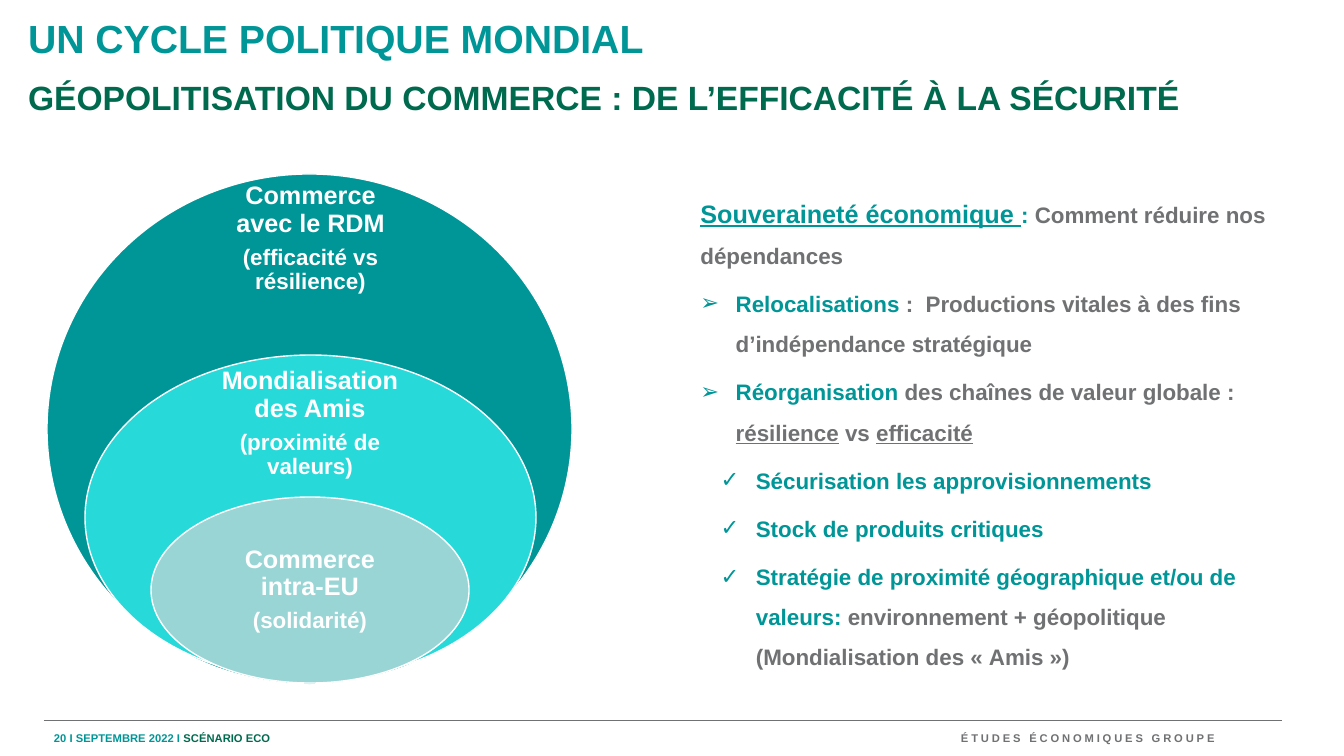
import pptx
import pptx.dml.color
import pptx.enum.shapes
import pptx.enum.text
import pptx.oxml
import pptx.oxml.ns
import pptx.util

PX = 9071
TEAL, GREEN, GREY, WHITE = "009597", "006A4E", "707173", "FFFFFF"
ANCHOR = pptx.enum.text.MSO_ANCHOR
ALIGN = pptx.enum.text.PP_ALIGN
NS = pptx.oxml.ns.nsdecls("a")


def rgb(value):
    return pptx.dml.color.RGBColor.from_string(value)


def write(paragraphs, holder, box, size=16, anchor=ANCHOR.MIDDLE, align=ALIGN.LEFT,
          inset=10, spacing=None):
    holder.left, holder.top, holder.width, holder.height = [v * PX for v in box]
    frame = holder.text_frame
    frame.word_wrap = True
    frame.auto_size = pptx.enum.text.MSO_AUTO_SIZE.NONE
    frame.vertical_anchor = anchor
    frame.margin_left = frame.margin_right = inset * PX
    frame.margin_top = frame.margin_bottom = 5 * PX
    for index, pieces in enumerate(paragraphs):
        paragraph = frame.paragraphs[0] if index == 0 else frame.add_paragraph()
        paragraph.alignment = align
        for text, color, *look in pieces:
            run = paragraph.add_run()
            run.text = text
            run.font.name = "Arial"
            run.font.bold = True
            run.font.size = pptx.util.Pt(look[0] if look else size)
            run.font.color.rgb = rgb(color)
            run.font.underline = "u" in look[1:]
            if spacing:
                run.font._element.set("spc", str(spacing))
    return frame


presentation = pptx.Presentation()
presentation.slide_width = 1344 * PX
presentation.slide_height = 756 * PX
slide = presentation.slides.add_slide(presentation.slide_layouts[5])
shapes = slide.shapes

write([[("UN CYCLE POLITIQUE MONDIAL", TEAL)]], shapes.title, (18, 13, 1282, 50), size=28)
write([[("GÉOPOLITISATION DU COMMERCE : DE L’EFFICACITÉ À LA SÉCURITÉ", GREEN)]],
      shapes.add_textbox(0, 0, 0, 0), (18, 72, 1205, 55), size=24, anchor=ANCHOR.TOP)

circles = [
    ((47, 174, 525, 510), TEAL, 183, 239, "Commerce avec le RDM", "(efficacité vs résilience)"),
    ((85, 355, 451, 325), "28D9DA", 210, 424, "Mondialisation des Amis", "(proximité de valeurs)"),
    ((151, 497, 318, 186), "99D5D5", 224, 590, "Commerce intra-EU", "(solidarité)"),
]
label_height = 140
for box, fill, label_width, label_middle, zone, principle in circles:
    circle = shapes.add_shape(pptx.enum.shapes.MSO_SHAPE.OVAL, *[v * PX for v in box])
    circle.shadow.inherit = False
    circle.fill.solid()
    circle.fill.fore_color.rgb = rgb(fill)
    circle.line.color.rgb = rgb(WHITE)
    circle.line.width = pptx.util.Pt(1)
    label_box = (310 - label_width // 2, label_middle - label_height // 2, label_width, label_height)
    label = write([[(zone, WHITE, 18)], [(principle, WHITE)]], shapes.add_textbox(0, 0, 0, 0),
                  label_box, align=ALIGN.CENTER, inset=14)
    for paragraph, gap in zip(label.paragraphs, (6.3, 5.6)):
        paragraph.line_spacing = 0.9
        paragraph.space_after = pptx.util.Pt(gap)

sovereignty = [
    (54, None, [("Souveraineté économique ", TEAL, 18, "u"), (": ", TEAL),
                ("Comment réduire nos dépendances", GREY)]),
    (89, "➢", [("Relocalisations ", TEAL),
               (":  Productions vitales à des fins d’indépendance stratégique", GREY)]),
    (89, "➢", [("Réorganisation", TEAL), (" des chaînes de valeur globale : ", GREY),
               ("résilience", GREY, 16, "u"), (" vs ", GREY), ("efficacité", GREY, 16, "u")]),
    (109, "✓", [("Sécurisation les approvisionnements", TEAL)]),
    (109, "✓", [("Stock de produits critiques", TEAL)]),
    (109, "✓", [("Stratégie de proximité géographique et/ou de valeurs: ", TEAL),
                ("environnement + géopolitique (Mondialisation des «\u00a0Amis\u00a0»)", GREY)]),
]
points = write([pieces for _, _, pieces in sovereignty], shapes.add_textbox(0, 0, 0, 0),
               (636, 178, 654, 524), anchor=ANCHOR.TOP)
for index, (paragraph, (indent, bullet, _)) in enumerate(zip(points.paragraphs, sovereignty)):
    properties = paragraph._p.get_or_add_pPr()
    properties.set("marL", str(indent * 9144))
    if bullet:
        properties.set("indent", str(-35 * 9144))
        for xml in (f'<a:buClr {NS}><a:srgbClr val="{TEAL}"/></a:buClr>',
                    f'<a:buFont {NS} typeface="Arial"/>',
                    f'<a:buChar {NS} char="{bullet}"/>'):
            properties.append(pptx.oxml.parse_xml(xml))
    paragraph.level = 1 if bullet == "✓" else 0
    paragraph.line_spacing = 1.5
    paragraph.space_before = pptx.util.Pt(2.8 if index else 0)
    paragraph.space_after = pptx.util.Pt(2.8)

footer_rule = shapes.add_connector(pptx.enum.shapes.MSO_CONNECTOR.STRAIGHT,
                                   44 * PX, 720 * PX, 1282 * PX, 720 * PX)
footer_rule.line.color.rgb = rgb(GREY)
footer_rule.line.width = pptx.util.Pt(0.5)
footer_rule._element.spPr.append(pptx.oxml.parse_xml(f"<a:effectLst {NS}/>"))
write([[("20 Ι SEPTEMBRE 2022 Ι ", TEAL), ("SCÉNARIO ECO", GREEN)]],
      shapes.add_textbox(0, 0, 0, 0), (44, 724, 563, 28), size=8)
write([[("ÉTUDES ÉCONOMIQUES GROUPE", GREY)]], shapes.add_textbox(0, 0, 0, 0),
      (764, 721, 461, 34), size=8, align=ALIGN.RIGHT, spacing=200)

presentation.save("out.pptx")
